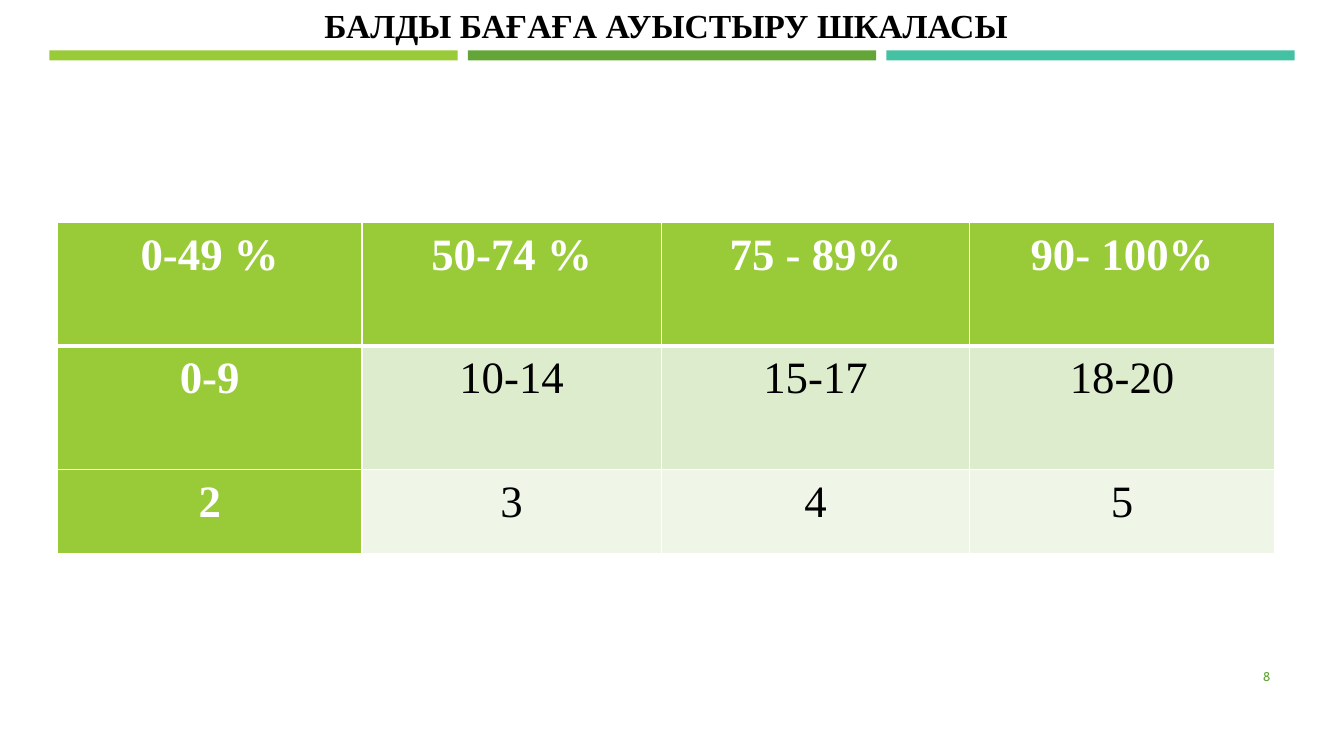
from lxml import etree
from pptx import Presentation
from pptx.dml.color import RGBColor
from pptx.enum.shapes import MSO_SHAPE
from pptx.enum.text import MSO_ANCHOR, PP_ALIGN
from pptx.oxml.ns import qn
from pptx.util import Emu, Pt

RECT = MSO_SHAPE.RECTANGLE
TOP, MIDDLE = MSO_ANCHOR.TOP, MSO_ANCHOR.MIDDLE
CENTER, RIGHT = PP_ALIGN.CENTER, PP_ALIGN.RIGHT

WHITE = RGBColor(0xFF, 0xFF, 0xFF)
BLACK = RGBColor(0x00, 0x00, 0x00)
LIME = RGBColor(0x99, 0xCB, 0x38)
GREEN = RGBColor(0x63, 0xA5, 0x37)
TEAL = RGBColor(0x44, 0xC1, 0xA3)
BAND_DARK = RGBColor(0xDE, 0xEC, 0xCE)
BAND_LIGHT = RGBColor(0xEF, 0xF6, 0xE8)

SCALE = 9144  # EMU per px, 100 px to the inch

GRADES = [
    ["0-49 %", "50-74 %", "75 - 89%", "90- 100%"],
    ["0-9", "10-14", "15-17", "18-20"],
    ["2", "3", "4", "5"],
]
ROW_FILLS = [LIME, BAND_DARK, BAND_LIGHT]


def px(n):
    return Emu(n * SCALE)


def write(tf, text, size=32, font="Times New Roman", color=BLACK, bold=False,
          align=CENTER, spacing=1.0):
    p = tf.paragraphs[0]
    p.alignment = align
    p.line_spacing = spacing
    r = p.add_run()
    r.text = text
    r.font.size = Pt(size)
    r.font.name = font
    r.font.bold = bold
    r.font.color.rgb = color


def set_borders(cell, color, **widths):
    """Draw cell edges; widths maps L, R, T and B, in that order, to points."""
    tc_pr = cell._tc.get_or_add_tcPr()
    for i, (side, width) in enumerate(widths.items()):
        ln = etree.Element(qn(f"a:ln{side}"), w=str(Pt(width)))
        fill = etree.SubElement(ln, qn("a:solidFill"))
        etree.SubElement(fill, qn("a:srgbClr"), val=str(color))
        tc_pr.insert(i, ln)


class SlideBuilder:
    def __init__(self, s):
        self.s = s

    def bar(self, x, y, w, h, color):
        sp = self.s.shapes.add_shape(RECT, px(x), px(y), px(w), px(h))
        sp.shadow.inherit = False
        sp.fill.solid()
        sp.fill.fore_color.rgb = color
        sp.line.fill.background()

    def text(self, x, y, w, h, text, anchor=TOP, **style):
        tf = self.s.shapes.add_textbox(px(x), px(y), px(w), px(h)).text_frame
        tf.word_wrap = True
        tf.vertical_anchor = anchor
        write(tf, text, **style)

    def table(self, x, y, widths, heights, rows, fills):
        """Add a table whose first row and first column are headers."""
        table = self.s.shapes.add_table(len(rows), len(widths), px(x), px(y),
                                        px(sum(widths)), px(sum(heights))).table
        for column, width in zip(table.columns, widths):
            column.width = px(width)
        for i, (row, height) in enumerate(zip(rows, heights)):
            table.rows[i].height = px(height)
            for j, value in enumerate(row):
                cell = table.cell(i, j)
                header = i == 0 or j == 0
                cell.margin_left = cell.margin_right = px(7)
                cell.margin_top = cell.margin_bottom = 0
                cell.fill.solid()
                cell.fill.fore_color.rgb = LIME if header else fills[i]
                set_borders(cell, WHITE, L=1, R=1, T=3 if i == 1 else 1,
                            B=3 if i == 0 else 1)
                write(cell.text_frame, value, bold=header, spacing=1.15,
                      color=WHITE if header else BLACK)


def main():
    prs = Presentation()
    prs.slide_width, prs.slide_height = px(1333), px(750)
    slide = SlideBuilder(prs.slides.add_slide(prs.slide_layouts[6]))

    for i, color in enumerate([LIME, GREEN, TEAL]):
        slide.bar(49 + 415 * i, 50, 405, 10, color)
    slide.text(1155, 651, 115, 40, "8", anchor=MIDDLE, size=9, font="Cabin",
               color=GREEN, align=RIGHT)
    slide.text(139, 0, 1043, 84, "БАЛДЫ БАҒАҒА АУЫСТЫРУ ШКАЛАСЫ", size=24, bold=True)
    slide.table(57, 221, [302, 297, 306, 302], [122, 123, 83], GRADES, ROW_FILLS)

    prs.save("out.pptx")


if __name__ == "__main__":
    main()
